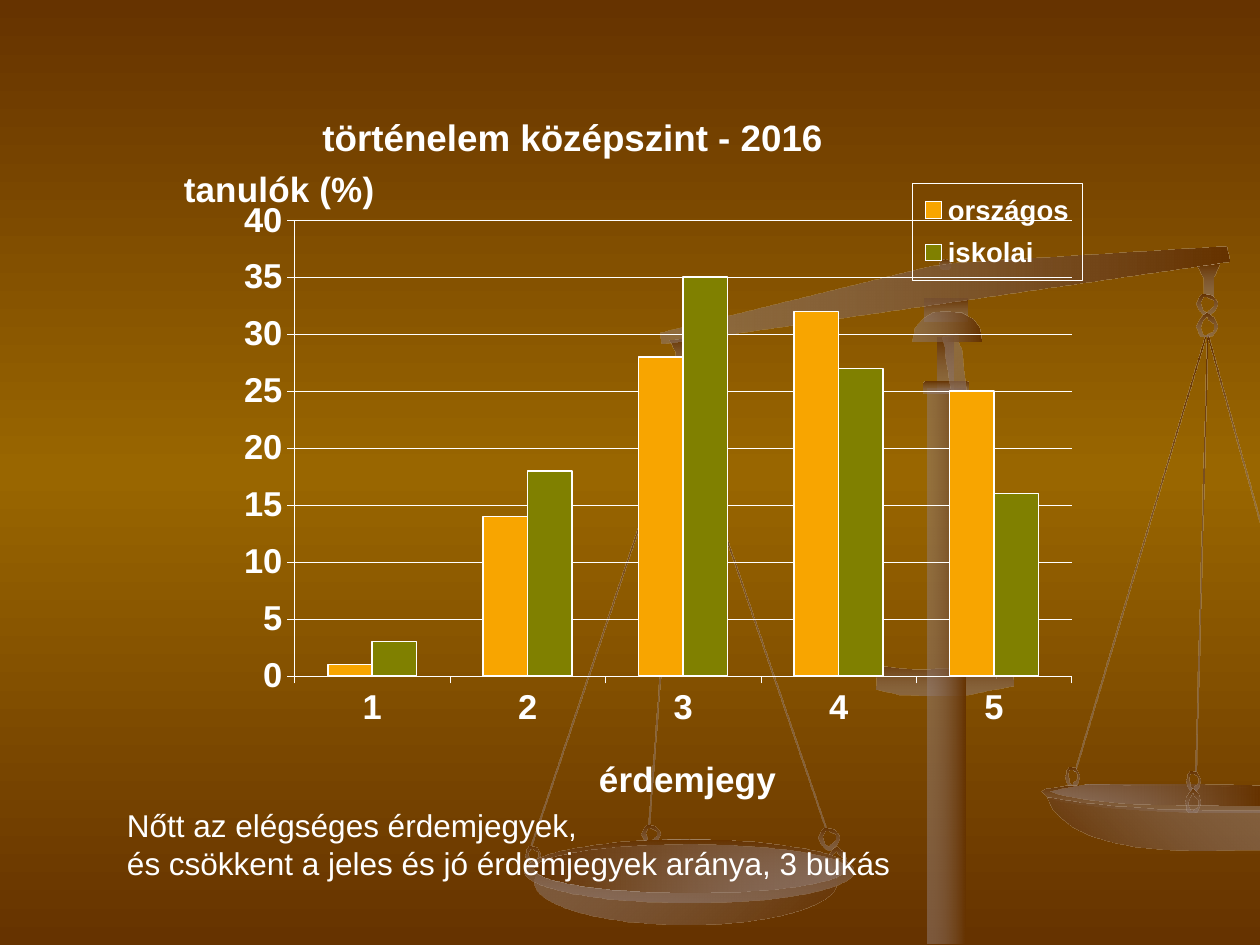
import pptx
import pptx.chart.data
import pptx.dml.color
import pptx.enum.chart
import pptx.enum.shapes
import pptx.enum.text
import pptx.oxml
import pptx.oxml.ns
import pptx.util

Pt = pptx.util.Pt
qn = pptx.oxml.ns.qn
SHAPE = pptx.enum.shapes.MSO_SHAPE
FONT = "Arial"
UNIT = 0.72  # drawing grid of the balance, in points
COLORS = {"dark": "663300", "gold": "996600", "metal": "937F79",
          "white": "FFFFFF", "national": "F8A500", "school": "808000"}
ALPHA = {"metal": 50}
RISE = ("dark", "metal")
FALL = ("metal", "dark")

# Chain link with its hole, pointing down, on a 16 by 17 grid
LINK = [
    [(8, 17), (13, 13), (15, 9), (16, 7), (15, 5), (12, 1), (7, 0), (4, 0),
     (2, 2), (1, 5), (0, 7), (2, 12), (5, 15)],
    [(8, 2), (12, 4), (13, 5), (13, 9), (9, 12), (8, 14), (5, 12), (4, 9),
     (3, 6), (5, 2)],
]
HANGER = [(18, 0), (0, 2), (5, 12), (5, 26), (13, 26), (13, 11)]
SHELF = [(697, 528), (724, 531), (739, 531), (757, 530), (778, 528), (802, 524),
         (804, 544), (782, 548), (768, 551), (751, 552), (733, 552), (714, 551),
         (696, 547)]
RIGHT_RIM = [(958, 624), (897, 624), (865, 623), (846, 624), (831, 626),
             (827, 628), (832, 633), (842, 636), (863, 639), (894, 642),
             (935, 644), (958, 645), (1000, 645), (1000, 626)]
RIGHT_BOWL = [(831, 633), (835, 642), (842, 649), (852, 657), (865, 663),
              (882, 668), (903, 672), (928, 674), (957, 675), (1000, 674),
              (1000, 643), (953, 643), (918, 642), (886, 640), (857, 637)]
RIGHT_INSIDE = [(956, 623), (862, 623), (843, 626), (834, 628), (843, 631),
                (863, 634), (893, 637), (933, 638), (1000, 639), (1000, 624)]
BEAM = [(973, 196), (976, 208), (525, 273), (524, 264), (737, 212), (759, 209)]
POINTER = [(791, 539), (750, 280), (750, 276), (748, 268), (760, 265), (761, 274),
           (763, 277)]
DOME = [(752, 247), (763, 248), (772, 253), (777, 260), (779, 271), (724, 271),
        (726, 260), (732, 253), (740, 248)]


def rgb(name):
    return pptx.dml.color.RGBColor.from_string(COLORS[name])


def set_gradient(fill, owner, names, angle):
    """Fill with evenly spaced gradient stops."""
    fill.solid()
    stops = ""
    for i, name in enumerate(names):
        alpha = ALPHA.get(name, 100) * 1000
        stops += (f'<a:gs pos="{100000 * i // (len(names) - 1)}">'
                  f'<a:srgbClr val="{COLORS[name]}"><a:alpha val="{alpha}"/>'
                  '</a:srgbClr></a:gs>')
    xml = (f'<a:gradFill {pptx.oxml.ns.nsdecls("a")} rotWithShape="1">'
           f'<a:gsLst>{stops}</a:gsLst>'
           f'<a:lin ang="{angle * 60000}" scaled="1"/></a:gradFill>')
    solid = owner.find(".//" + qn("a:solidFill"))
    solid.getparent().replace(solid, pptx.oxml.parse_xml(xml))


def add_balance(s, left, top):
    """Pair of scales; grid coordinates are relative to left, top."""
    def finish(sp, names, angle):
        sp.shadow.inherit = False
        sp.line.fill.background()
        set_gradient(sp.fill, sp.element, names, angle)

    def preset(kind, x, y, w, h, names=RISE, angle=90, rotation=0):
        sp = s.shapes.add_shape(kind, Pt(left + x * UNIT), Pt(top + y * UNIT),
                                Pt(w * UNIT), Pt(h * UNIT))
        sp.rotation = rotation
        finish(sp, names, angle)

    def outline(contours, names=RISE, angle=90, close=True):
        fb = s.shapes.build_freeform(*contours[0][0], scale=Pt(UNIT))
        for i, points in enumerate(contours):
            if i:
                fb.move_to(*points[0])
            fb.add_line_segments(points[1:], close=close)
        finish(fb.convert_to_shape(Pt(left), Pt(top)), names, angle)

    def link(x, y, w, h, up=False):
        outline([[(x + px * w / 16, y + (17 - py if up else py) * h / 17)
                  for px, py in points] for points in LINK])

    # Pivot and wires
    preset(SHAPE.RECTANGLE, 734, 237, 34, 18)
    preset(SHAPE.OVAL, 746, 206, 8, 8)
    for x, y, h, rotation in [(904, 260, 360, 16.6), (953, 266, 347, 1.5),
                              (979, 264, 153, 344.6), (598, 315, 353, 341),
                              (479, 316, 368, 18.6), (527, 325, 331, 4.2)]:
        preset(SHAPE.RECTANGLE, x, y, 1, h, rotation=rotation)
    # Shelf and right pan
    link(846, 609, 11, 17)
    outline([SHELF])
    outline([RIGHT_RIM])
    outline([RIGHT_BOWL], angle=315)
    outline([RIGHT_INSIDE], FALL, 0)
    # Hangers with two links each, then the beam
    for x, y in [(531, 268), (950, 209)]:
        outline([[(x + px, y + py) for px, py in HANGER]])
        link(x, y + 25, 16, 17)
        link(x, y + 39, 16, 19, up=True)
    link(942, 612, 11, 17)
    outline([BEAM], FALL, 0)
    # Left pan
    link(509, 655, 15, 16)
    link(656, 672, 16, 19, up=True)
    link(417, 672, 12, 16)
    preset(SHAPE.OVAL, 424, 666, 240, 68, FALL, 45)
    preset(SHAPE.OVAL, 416, 666, 261, 50)
    preset(SHAPE.OVAL, 424, 670, 247, 38, angle=0)
    link(650, 658, 16, 17)
    link(941, 626, 12, 19, up=True)
    # Post
    preset(SHAPE.RECTANGLE, 736, 308, 30, 441, FALL, 0)
    preset(SHAPE.RECTANGLE, 744, 268, 13, 42)
    preset(SHAPE.ROUNDED_RECTANGLE, 733, 303, 36, 9)
    outline([POINTER], FALL, 45, close=False)
    outline([DOME], FALL, 0)


def set_font(font, size, bold=True):
    font.name, font.size, font.bold = FONT, Pt(size), bold
    font.color.rgb = rgb("white")


def set_line(line, width):
    line.color.rgb = rgb("white")
    line.width = Pt(width)


def set_layout(element, index, inner=False, **sizes):
    """Fix a chart part at fractions of the chart area."""
    for old in element.findall(qn("c:layout")):
        element.remove(old)
    target = '<c:layoutTarget val="inner"/>' if inner else ""
    modes = "".join(f'<c:{k}Mode val="edge"/>' for k in "xy")
    values = "".join(f'<c:{k} val="{v}"/>' for k, v in sizes.items())
    element.insert(index, pptx.oxml.parse_xml(
        f'<c:layout {pptx.oxml.ns.nsdecls("c")}><c:manualLayout>'
        f'{target}{modes}{values}</c:manualLayout></c:layout>'))


def set_title(title, text, size, x, y):
    p = title.text_frame.paragraphs[0]
    r = p.add_run()
    r.text = text
    set_font(r.font, size)
    body = title.element.find(".//" + qn("a:bodyPr")) if hasattr(title, "element") \
        else title.text_frame._txBody.bodyPr
    body.set("rot", "0")
    body.set("vert", "horz")
    set_layout(title._element, 1, x=x, y=y)


def add_grade_chart(s, left, top, width, height):
    data = pptx.chart.data.CategoryChartData()
    data.categories = ["1", "2", "3", "4", "5"]
    data.add_series("országos", [1, 14, 28, 32, 25])
    data.add_series("iskolai", [3, 18, 35, 27, 16])
    chart = s.shapes.add_chart(pptx.enum.chart.XL_CHART_TYPE.COLUMN_CLUSTERED,
                               Pt(left), Pt(top), Pt(width), Pt(height), data).chart
    set_font(chart.font, 17.1)
    set_title(chart.chart_title, "történelem középszint - 2016", 21, 0.26, 0.03)
    # Axes
    cat, val = chart.category_axis, chart.value_axis
    set_title(cat.axis_title, "érdemjegy", 20, 0.52, 0.89)
    set_title(val.axis_title, "tanulók (%)", 20, 0.13, 0.1)
    for axis in (cat, val):
        set_font(axis.tick_labels.font, 19.7)
        set_line(axis.format.line, 0.22)
    val.minimum_scale, val.maximum_scale, val.major_unit = 0, 40, 5
    set_line(val.major_gridlines.format.line, 0.22)
    # Columns
    plot = chart.plots[0]
    plot.gap_width, plot.overlap, plot.vary_by_categories = 150, 0, False
    for series, name in zip(plot.series, ("national", "school")):
        series.format.fill.solid()
        series.format.fill.fore_color.rgb = rgb(name)
        set_line(series.format.line, 0.88)
    set_layout(chart._chartSpace.chart.plotArea, 0, inner=True,
               x=0.24, y=0.18, w=0.73, h=0.61)
    # Framed legend
    chart.has_legend = True
    legend = chart.legend
    legend.include_in_layout = False
    set_font(legend.font, 15.7)
    set_layout(legend._element, 1, x=0.82, y=0.13, w=0.16, h=0.13)
    legend._element.find(qn("c:txPr")).addprevious(pptx.oxml.parse_xml(
        f'<c:spPr {pptx.oxml.ns.nsdecls("c", "a")}><a:noFill/><a:ln w="2800"><a:solidFill>'
        f'<a:srgbClr val="{COLORS["white"]}"/></a:solidFill></a:ln></c:spPr>'))


def add_comment(s, left, top, width, height):
    tf = s.shapes.add_textbox(Pt(left), Pt(top), Pt(width), Pt(height)).text_frame
    tf.word_wrap = False
    tf.auto_size = pptx.enum.text.MSO_AUTO_SIZE.SHAPE_TO_FIT_TEXT
    for i, text in enumerate(["Nőtt az elégséges érdemjegyek,",
                              "és csökkent a jeles és jó érdemjegyek aránya, 3 bukás"]):
        p = tf.add_paragraph() if i else tf.paragraphs[0]
        r = p.add_run()
        r.text = text
        set_font(r.font, 18, bold=False)


def main():
    prs = pptx.Presentation()
    prs.slide_width, prs.slide_height = Pt(720), Pt(540)
    s = prs.slides.add_slide(prs.slide_layouts[6])
    set_gradient(s.background.fill, s.element, ("dark", "gold", "dark"), 90)
    add_balance(s, 0, 0)
    add_grade_chart(s, 22.3, 49, 608.4, 427)
    add_comment(s, 65.5, 457.2, 465.1, 51.1)
    prs.save("out.pptx")


if __name__ == "__main__":
    main()
